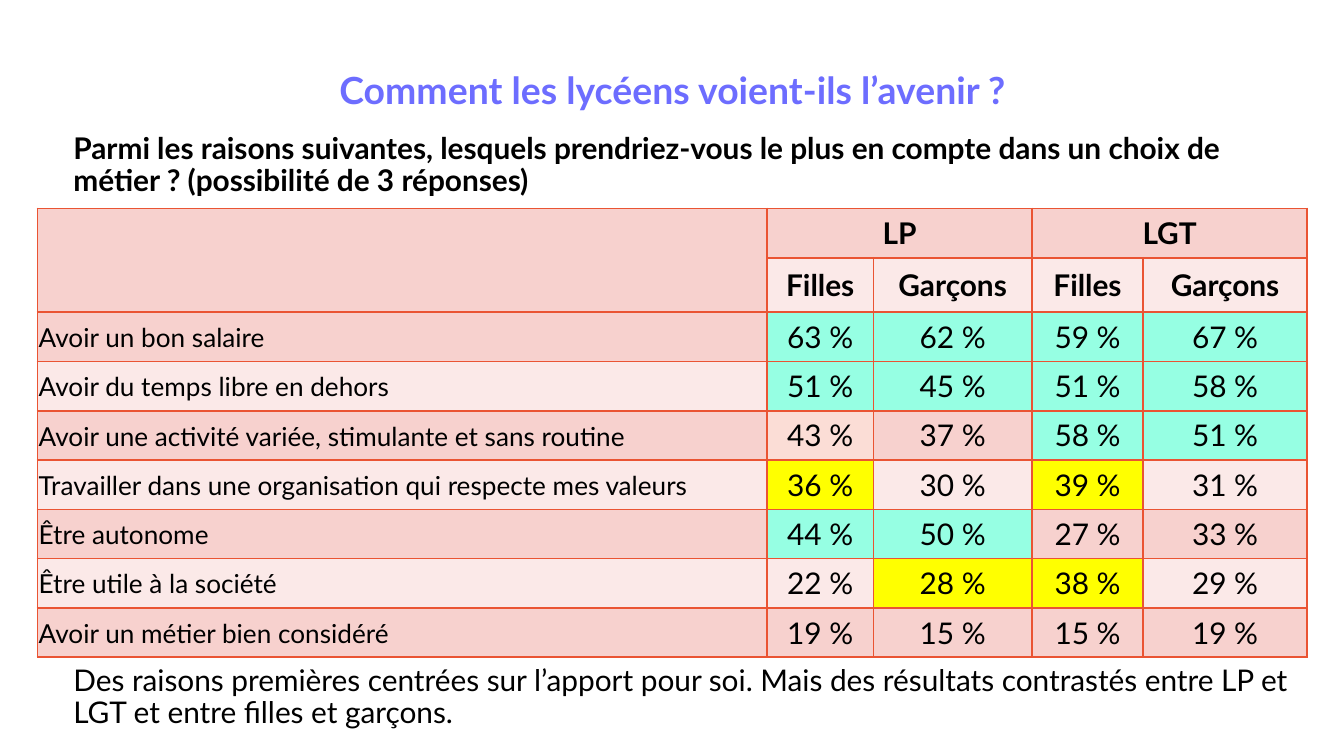
from dataclasses import dataclass
from typing import Optional

from lxml.etree import SubElement
from pptx import Presentation
from pptx.dml.color import RGBColor as Rgb
from pptx.enum.text import MSO_ANCHOR as Anchor, MSO_AUTO_SIZE as AutoSize, PP_ALIGN as Align
from pptx.oxml.ns import qn
from pptx.util import Pt


@dataclass(frozen=True)
class Theme:
    font: str = "Lato"
    title: str = "6D6DFF"
    ink: str = "000000"
    border: str = "EA5433"
    bands: tuple[str, str] = ("F7D1CE", "FBE9E8")
    title_size: float = 20
    text_size: float = 16
    label_size: float = 14
    line_spacing: float = 0.9
    border_width: float = 1


@dataclass(frozen=True)
class Box:
    left: float
    top: float
    width: float
    height: float

    def lengths(self) -> tuple[Pt, Pt, Pt, Pt]:
        return Pt(self.left), Pt(self.top), Pt(self.width), Pt(self.height)


@dataclass(frozen=True)
class Reason:
    """A table row; each letter of marks names a highlight, and "-" keeps the band colour."""
    label: str
    shares: tuple[int, int, int, int]
    marks: str


THEME = Theme()
HIGHLIGHTS = {"g": "96FFE3", "y": "FFFF00", "p": "FBDDD6"}
TITLE_BOX = Box(31, 26.6, 657.4, 67.7)
QUESTION_BOX = Box(31, 60.5, 657.4, 56.9)
CONCLUSION_BOX = Box(31, 352.8, 668.9, 42.5)
TABLE_LEFT, TABLE_TOP = 20, 111.7
COLUMN_WIDTHS = (391, 56.9, 85, 59.5, 87.9)
ROW_HEIGHT = 26.4
HEADER_ROWS = 2
TEXT_INDENT = 1.25

REASONS = (
    Reason("Avoir un bon salaire", (63, 62, 59, 67), "gggg"),
    Reason("Avoir du temps libre en dehors", (51, 45, 51, 58), "gggg"),
    Reason("Avoir une activité variée, stimulante et sans routine", (43, 37, 58, 51), "p-gg"),
    Reason("Travailler dans une organisation qui respecte mes valeurs", (36, 30, 39, 31), "y-y-"),
    Reason("Être autonome", (44, 50, 27, 33), "gg--"),
    Reason("Être utile à la société", (22, 28, 38, 29), "-yy-"),
    Reason("Avoir un métier bien considéré", (19, 15, 15, 19), "----"),
)


def style_paragraph(para, size: float, color: str = THEME.ink, bold: bool = False,
                    align: Align = Align.LEFT) -> None:
    para.alignment = align
    font = para.font
    font.name, font.size, font.bold = THEME.font, Pt(size), bold
    font.color.rgb = Rgb.from_string(color)


def fill_frame(shape, text: str, size: float, color: str = THEME.ink, bold: bool = False,
               align: Align = Align.LEFT, space_after: float = 0) -> None:
    frame = shape.text_frame
    frame.word_wrap = True
    frame.auto_size = AutoSize.NONE
    frame.vertical_anchor = Anchor.MIDDLE
    frame.text = text
    para = frame.paragraphs[0]
    para.line_spacing = THEME.line_spacing
    para.space_before, para.space_after = Pt(0), Pt(space_after)
    properties = para._p.get_or_add_pPr()
    properties.set("marL", str(Pt(TEXT_INDENT)))
    properties.set("indent", "0")
    style_paragraph(para, size, color, bold, align)


def add_title(slide, text: str) -> None:
    title = slide.shapes.title
    title.left, title.top, title.width, title.height = TITLE_BOX.lengths()
    fill_frame(title, text, THEME.title_size, THEME.title, True, Align.CENTER)
    title.text_frame.margin_bottom = Pt(25.2)


def add_text(slide, box: Box, text: str, bold: bool = False, space_after: float = 0) -> None:
    fill_frame(slide.shapes.add_textbox(*box.lengths()), text, THEME.text_size,
               bold=bold, space_after=space_after)


def add_borders(cell) -> None:
    properties = cell._tc.get_or_add_tcPr()
    for position, side in enumerate(("lnL", "lnR", "lnT", "lnB")):
        line = SubElement(properties, qn(f"a:{side}"), w=str(Pt(THEME.border_width)))
        SubElement(SubElement(line, qn("a:solidFill")), qn("a:srgbClr"), val=THEME.border)
        properties.insert(position, line)


def write_cell(cell, text: str, bold: bool = False, fill: Optional[str] = None) -> None:
    cell.text = text
    style_paragraph(cell.text_frame.paragraphs[0], THEME.text_size, bold=bold, align=Align.CENTER)
    if fill:
        cell.fill.solid()
        cell.fill.fore_color.rgb = Rgb.from_string(fill)


def write_label(cell, text: str) -> None:
    cell.text = text
    cell.margin_left = cell.margin_right = cell.margin_top = Pt(0.7)
    cell.margin_bottom = Pt(0)
    style_paragraph(cell.text_frame.paragraphs[0], THEME.label_size)


def add_reason_table(slide) -> None:
    row_count = HEADER_ROWS + len(REASONS)
    box = Box(TABLE_LEFT, TABLE_TOP, sum(COLUMN_WIDTHS), ROW_HEIGHT * row_count)
    table = slide.shapes.add_table(row_count, len(COLUMN_WIDTHS), *box.lengths()).table
    table.first_row = table.horz_banding = False
    for column, width in zip(table.columns, COLUMN_WIDTHS):
        column.width = Pt(width)
    for index, row in enumerate(table.rows):
        row.height = Pt(ROW_HEIGHT)
        for cell in row.cells:
            cell.vertical_anchor = Anchor.MIDDLE
            cell.fill.solid()
            cell.fill.fore_color.rgb = Rgb.from_string(THEME.bands[index % 2])
            add_borders(cell)

    table.cell(0, 0).merge(table.cell(1, 0))
    for column, school in ((1, "LP"), (3, "LGT")):
        table.cell(0, column).merge(table.cell(0, column + 1))
        write_cell(table.cell(0, column), school, bold=True)
        for offset, group in enumerate(("Filles", "Garçons")):
            write_cell(table.cell(1, column + offset), group, bold=True)

    for index, reason in enumerate(REASONS, start=HEADER_ROWS):
        write_label(table.cell(index, 0), reason.label)
        for column, (share, mark) in enumerate(zip(reason.shares, reason.marks), start=1):
            write_cell(table.cell(index, column), f"{share} %", fill=HIGHLIGHTS.get(mark))


def main() -> None:
    deck = Presentation()
    deck.slide_width, deck.slide_height = Pt(720), Pt(405)
    slide = deck.slides.add_slide(deck.slide_layouts[5])
    add_title(slide, "Comment les lycéens voient-ils l’avenir ?")
    add_text(slide, QUESTION_BOX,
             "Parmi les raisons suivantes, lesquels prendriez-vous le plus en compte "
             "dans un choix de métier ? (possibilité de 3 réponses)", bold=True)
    add_reason_table(slide)
    add_text(slide, CONCLUSION_BOX,
             "Des raisons premières centrées sur l’apport pour soi. Mais des résultats "
             "contrastés entre LP et LGT et entre filles et garçons.", space_after=6)
    deck.save("out.pptx")


if __name__ == "__main__":
    main()
